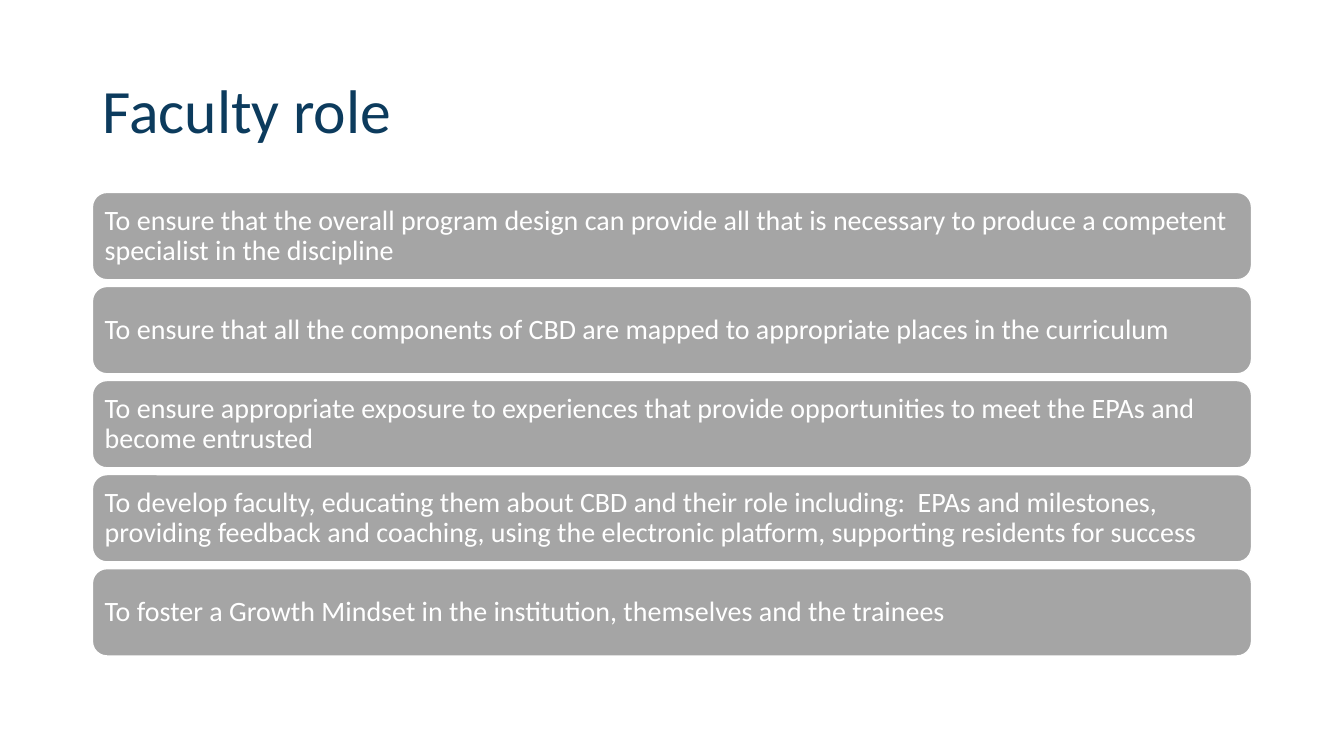
from pptx import Presentation
from pptx.dml.color import RGBColor
from pptx.enum.shapes import MSO_SHAPE
from pptx.enum.text import MSO_ANCHOR, MSO_AUTO_SIZE, PP_ALIGN
from pptx.util import Cm, Pt

ROUNDED = MSO_SHAPE.ROUNDED_RECTANGLE
MIDDLE = MSO_ANCHOR.MIDDLE
NO_AUTOFIT = MSO_AUTO_SIZE.NONE
LEFT = PP_ALIGN.LEFT

NAVY = RGBColor(0x0C, 0x3B, 0x5D)
GREY = RGBColor(0xA5, 0xA5, 0xA5)
WHITE = RGBColor(0xFF, 0xFF, 0xFF)

MARGIN = 2.33
CONTENT_WIDTH = 29.21
BAR_TOP = 4.85
BAR_HEIGHT = 2.2
BAR_PITCH = 2.37
BAR_INSET = Cm(0.2)

ROLES = [
    "To ensure that the overall program design can provide all that is necessary "
    "to produce a competent specialist in the discipline",
    "To ensure that all the components of CBD are mapped to appropriate places "
    "in the curriculum",
    "To ensure appropriate exposure to experiences that provide opportunities "
    "to meet the EPAs and become entrusted",
    "To develop faculty, educating them about CBD and their role including:  EPAs "
    "and milestones, providing feedback and coaching, using the electronic platform, "
    "supporting residents for success",
    "To foster a Growth Mindset in the institution, themselves and the trainees",
]


def write_text(text_frame, text, size, color):
    text_frame.word_wrap = True
    text_frame.auto_size = NO_AUTOFIT
    text_frame.vertical_anchor = MIDDLE
    paragraph = text_frame.paragraphs[0]
    paragraph.alignment = LEFT
    paragraph.line_spacing = 0.9
    run = paragraph.add_run()
    run.text = text
    run.font.name = "Calibri"
    run.font.size = Pt(size)
    run.font.color.rgb = color


presentation = Presentation()
presentation.slide_width = Cm(33.87)
presentation.slide_height = Cm(19.05)
slide = presentation.slides.add_slide(presentation.slide_layouts[5])

title = slide.shapes.title
title.left, title.top = Cm(MARGIN), Cm(1.01)
title.width, title.height = Cm(CONTENT_WIDTH), Cm(3.68)
write_text(title.text_frame, "Faculty role", 44, NAVY)

for index, role in enumerate(ROLES):
    bar = slide.shapes.add_shape(
        ROUNDED,
        Cm(MARGIN), Cm(BAR_TOP + index * BAR_PITCH),
        Cm(CONTENT_WIDTH), Cm(BAR_HEIGHT),
    )
    bar.name = f"Faculty role {index + 1}"
    bar.shadow.inherit = False
    bar.fill.solid()
    bar.fill.fore_color.rgb = GREY
    bar.line.color.rgb = WHITE
    bar.line.width = Pt(1)
    text_frame = bar.text_frame
    text_frame.margin_left = text_frame.margin_right = BAR_INSET
    text_frame.margin_top = text_frame.margin_bottom = BAR_INSET
    write_text(text_frame, role, 20, WHITE)

presentation.save("out.pptx")
